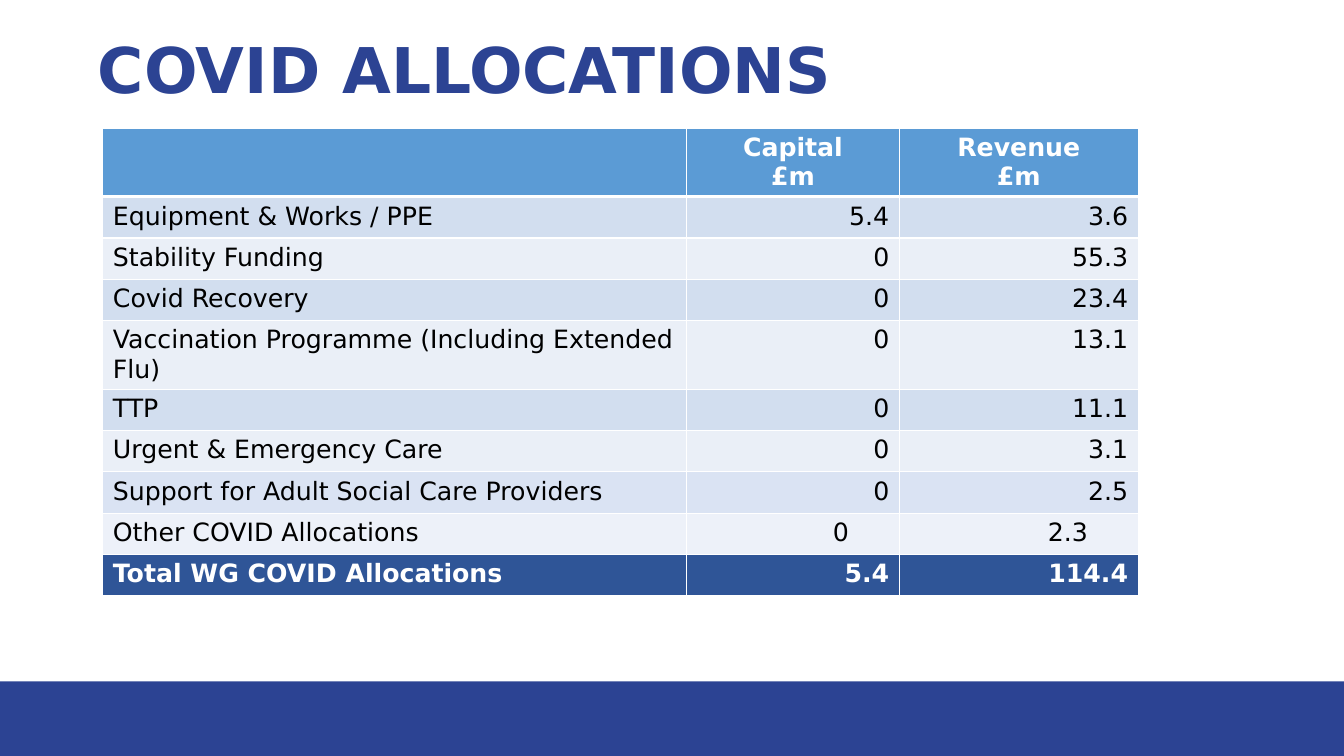
from dataclasses import dataclass
from lxml import etree
from pptx import Presentation
from pptx import util as u
from pptx.dml import color
from pptx.enum import shapes, text
from pptx.oxml import ns


@dataclass(frozen=True)
class Theme:
    """Hold the colours, font and type sizes of the slide."""
    font: str = "DejaVu Sans"
    navy: str = "2C4393"
    head: str = "5B9BD5"
    total: str = "2F5597"
    white: str = "FFFFFF"
    black: str = "000000"
    bands: tuple = ("D2DEEF", "EAEFF7")
    pales: tuple = ("DAE3F3", "EDF1F9")
    title: float = 45
    body: float = 18


THEME = Theme()
LEFT, MID, RIGHT = text.PP_ALIGN.LEFT, text.PP_ALIGN.CENTER, text.PP_ALIGN.RIGHT
WIDTHS = (5.79, 2.11, 2.37)
HEADS = ("", "Capital\n£m", "Revenue\n£m")
ROWS = (
    ("Equipment & Works / PPE", "5.4", "3.6"),
    ("Stability Funding", "0", "55.3"),
    ("Covid Recovery", "0", "23.4"),
    ("Vaccination Programme (Including Extended Flu)", "0", "13.1"),
    ("TTP", "0", "11.1"),
    ("Urgent & Emergency Care", "0", "3.1"),
    ("Support for Adult Social Care Providers", "0", "2.5"),
    ("Other COVID Allocations", "0", "2.3"),
)
TOTAL = ("Total WG COVID Allocations", "5.4", "114.4")


def paint(fill, tint):
    """Give a fill one solid colour."""
    fill.solid()
    fill.fore_color.rgb = color.RGBColor.from_string(tint)


def write(frame, words, size=THEME.body, tint=THEME.black, bold=False, align=LEFT, space=None):
    """Put text in a frame, one paragraph a line, in the given format."""
    frame.text = words
    for para in frame.paragraphs:
        para.alignment = align
        para.line_spacing = space
        font = para.font
        font.name, font.size, font.bold = THEME.font, u.Pt(size), bold
        font.color.rgb = color.RGBColor.from_string(tint)


def rule(cell, top, base):
    """Draw white lines around a cell, with top and base widths in points."""
    props = cell._tc.get_or_add_tcPr()
    for side, width in zip("LRTB", (1, 1, top, base)):
        line = etree.SubElement(props, ns.qn(f"a:ln{side}"), w=str(u.Pt(width)))
        solid = etree.SubElement(line, ns.qn("a:solidFill"))
        etree.SubElement(solid, ns.qn("a:srgbClr"), val=THEME.white)


def add_title(slide, left, top, width, height):
    """Place and format the slide title in its box."""
    title = slide.shapes.title
    title.left, title.top = u.Inches(left), u.Inches(top)
    title.width, title.height = u.Inches(width), u.Inches(height)
    frame = title.text_frame
    frame.vertical_anchor = text.MSO_ANCHOR.MIDDLE
    frame.auto_size = text.MSO_AUTO_SIZE.NONE
    write(frame, "COVID ALLOCATIONS", size=THEME.title, tint=THEME.navy, bold=True, space=0.9)


def add_band(slide, left, top, width, height):
    """Draw the plain footer band in its box."""
    band = slide.shapes.add_shape(shapes.MSO_SHAPE.RECTANGLE, u.Inches(left), u.Inches(top),
                                  u.Inches(width), u.Inches(height))
    band.shadow.inherit = False
    paint(band.fill, THEME.navy)
    band.line.fill.background()


def add_grid(slide, left, top, width, row):
    """Build the table of funds from its corner, width and row height."""
    lines = (HEADS, *ROWS, TOTAL)
    fills = (THEME.head, *THEME.bands * 3, *THEME.pales, THEME.total)
    last = len(lines) - 1
    table = slide.shapes.add_table(len(lines), len(WIDTHS), u.Inches(left), u.Inches(top),
                                   u.Inches(width), u.Inches(row * len(lines))).table
    for col, share in zip(table.columns, WIDTHS):
        col.width = u.Inches(width * share / sum(WIDTHS))
    for r, (line, tint) in enumerate(zip(lines, fills)):
        table.rows[r].height = u.Inches(row)
        strong = r in (0, last)
        for c, words in enumerate(line):
            cell = table.cell(r, c)
            rule(cell, 3 if r == 1 else 1, 3 if r == 0 else 1)
            paint(cell.fill, tint)
            write(cell.text_frame, words, bold=strong,
                  tint=THEME.white if strong else THEME.black,
                  align=MID if r == 0 else RIGHT if c else LEFT)
            if c and r == last - 1:
                cell.margin_right = u.Inches(0.5)


def main():
    """Build the slide and save it."""
    deck = Presentation()
    deck.slide_width, deck.slide_height = u.Inches(13.33), u.Inches(7.5)
    slide = deck.slides.add_slide(deck.slide_layouts[5])
    add_band(slide, 0, 6.76, 13.33, 0.74)
    add_title(slide, 0.87, 0, 11.5, 1.45)
    add_grid(slide, 1.02, 1.27, sum(WIDTHS), 0.41)
    deck.save("out.pptx")


if __name__ == "__main__":
    main()
